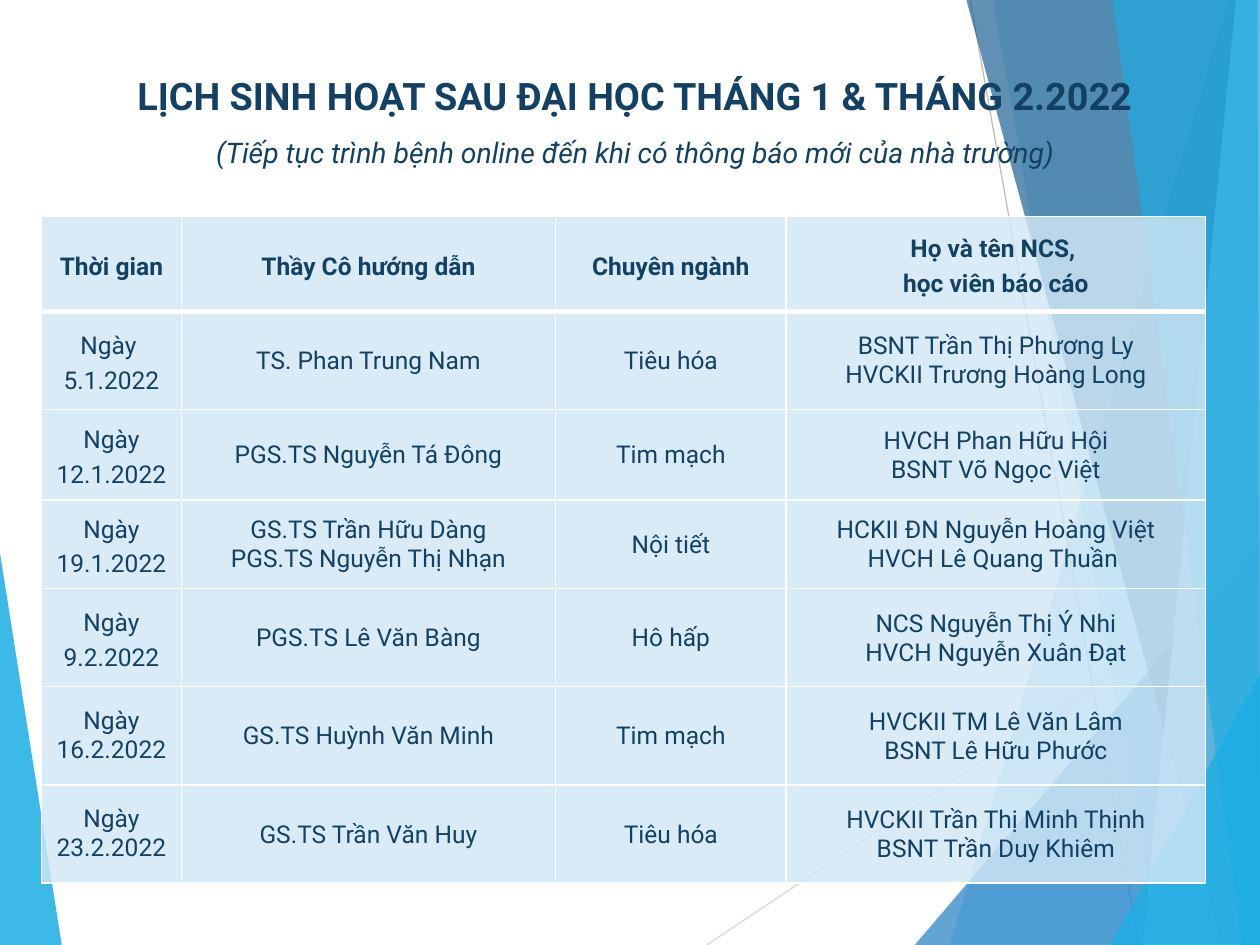
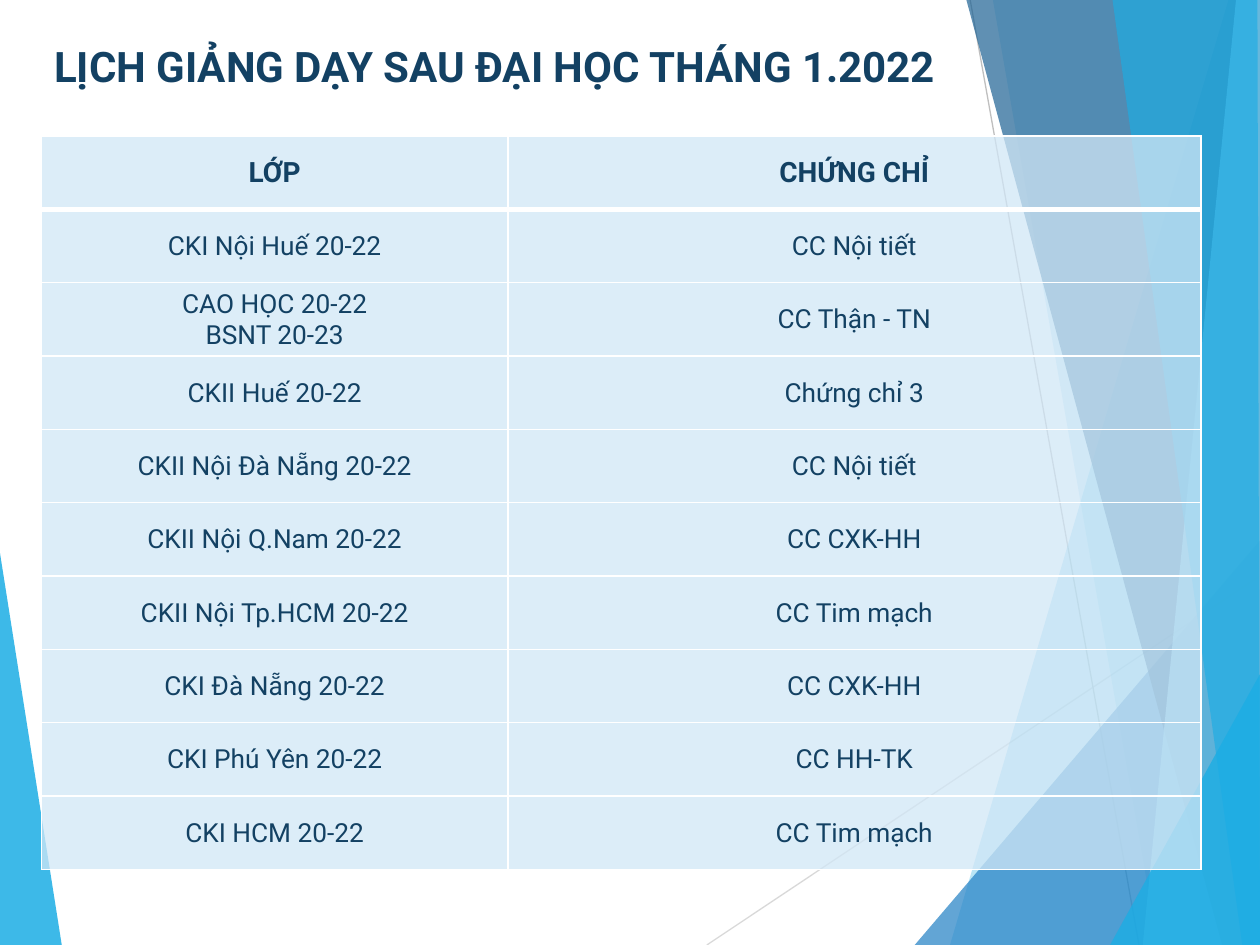
import pptx
import pptx.util
import pptx.dml.color
import pptx.enum.shapes
import pptx.enum.text
import pptx.oxml
import pptx.oxml.ns
from pptx.util import Inches

COLOURS = {
    "text": "134163", "cell": "D1E7F6", "border": "FFFFFF",
    "sky": "1CADE4", "blue": "2683C6", "navy": "1D6294", "pale": "77CEEF",
    "light line": "D9D9D9", "grey line": "BFBFBF",
}
FONT = "Roboto"
CENTER = pptx.enum.text.PP_ALIGN.CENTER
LEFT = pptx.enum.text.PP_ALIGN.LEFT
TIGHT = (0.01, 0.01, 0.01, 0)
DATE_MARGINS = (0.07, 0, 0.07, 0)
HEADER_MARGINS = (0.1, 0.05, 0.1, 0.05)

LEFT_FACET = ("sky", 85, [(0, 4.39), (0.49, 7.5), (0, 7.5)])
RIGHT_FACETS = [
    ("sky", 30, [(9.75, 0), (7.54, 7.5), (10, 7.5), (10, 0)]),
    ("sky", 20, [(7.88, 0), (9.19, 7.5), (10, 7.5), (10, 0)]),
    ("blue", 72, [(7.26, 7.5), (10, 4.29), (10, 7.5)]),
    ("navy", 70, [(7.67, 0), (9.7, 7.5), (10, 7.5), (10, 0)]),
    ("pale", 70, [(9.81, 0), (9.07, 7.5), (10, 7.5), (10, 0)]),
    ("sky", 65, [(8.83, 0), (9.86, 7.5), (10, 7.5), (9.98, 0)]),
    ("sky", 80, [(8.81, 7.5), (10, 5.35), (10, 7.5)]),
]
LINES = [("light line", 5.61, 7.5, 10, 4.57), ("grey line", 7.7, 0, 9.04, 7.5)]

CLINIC_ROWS = [
    ("Thời gian", "Thầy Cô hướng dẫn", "Chuyên ngành", "Họ và tên NCS, \nhọc viên báo cáo"),
    ("Ngày \n5.1.2022", "TS. Phan Trung Nam", "Tiêu hóa",
     "BSNT Trần Thị Phương Ly\nHVCKII Trương Hoàng Long"),
    ("Ngày 12.1.2022", "PGS.TS Nguyễn Tá Đông", "Tim mạch",
     "HVCH Phan Hữu Hội\nBSNT Võ Ngọc Việt"),
    ("Ngày 19.1.2022", "GS.TS Trần Hữu Dàng\nPGS.TS Nguyễn Thị Nhạn", "Nội tiết",
     "HCKII ĐN Nguyễn Hoàng Việt\nHVCH Lê Quang Thuần "),
    ("Ngày 9.2.2022", "PGS.TS Lê Văn Bàng", "Hô hấp",
     "NCS Nguyễn Thị Ý Nhi\nHVCH Nguyễn Xuân Đạt"),
    ("Ngày 16.2.2022", "GS.TS Huỳnh Văn Minh", "Tim mạch",
     "HVCKII TM Lê Văn Lâm\nBSNT Lê Hữu Phước"),
    ("Ngày\n23.2.2022", "GS.TS Trần Văn Huy", "Tiêu hóa",
     "HVCKII Trần Thị Minh Thịnh\nBSNT Trần Duy Khiêm"),
]
CLASS_ROWS = [
    ("LỚP", "CHỨNG CHỈ"),
    ("CKI Nội Huế 20-22", "CC Nội tiết"),
    ("CAO HỌC 20-22\nBSNT 20-23", "CC Thận - TN"),
    ("CKII Huế 20-22", "Chứng chỉ 3"),
    ("CKII Nội Đà Nẵng 20-22", "CC Nội tiết"),
    ("CKII Nội Q.Nam 20-22", "CC CXK-HH"),
    ("CKII Nội Tp.HCM 20-22", "CC Tim mạch"),
    ("CKI Đà Nẵng 20-22", "CC CXK-HH"),
    ("CKI Phú Yên 20-22", "CC HH-TK"),
    ("CKI HCM 20-22", "CC Tim mạch"),
]


def rgb(name):
    return pptx.dml.color.RGBColor.from_string(COLOURS[name])


def fill_translucent(fill, colour, opacity):
    """Fill with a colour at an opacity in percent."""
    fill.solid()
    fill.fore_color.rgb = rgb(colour)
    alpha = pptx.oxml.parse_xml(
        f'<a:alpha {pptx.oxml.ns.nsdecls("a")} val="{opacity * 1000}"/>')
    fill._xPr.find(".//" + pptx.oxml.ns.qn("a:srgbClr")).append(alpha)


def style_paragraph(para, size, bold=False, italic=False, align=CENTER, spacing=1.0):
    para.alignment = align
    para.line_spacing = spacing
    for span in para.runs:
        span.font.name = FONT
        span.font.size = pptx.util.Pt(size)
        span.font.bold = bold
        span.font.italic = italic
        span.font.color.rgb = rgb("text")


def add_facet(page, colour, opacity, points):
    corners = [(Inches(x), Inches(y)) for x, y in points]
    builder = page.shapes.build_freeform(*corners[0])
    builder.add_line_segments(corners[1:], close=True)
    facet = builder.convert_to_shape()
    facet.shadow.inherit = False
    facet.line.fill.background()
    fill_translucent(facet.fill, colour, opacity)
    return facet


def add_line(page, colour, *ends):
    line = page.shapes.add_connector(
        pptx.enum.shapes.MSO_CONNECTOR.STRAIGHT, *map(Inches, ends))
    line.line.color.rgb = rgb(colour)
    line.line.width = pptx.util.Pt(0.75)
    line._element.spPr.append(
        pptx.oxml.parse_xml(f'<a:effectLst {pptx.oxml.ns.nsdecls("a")}/>'))
    return line


def move_backdrop_to_layout(page, layout):
    """Draw the facets on a page, then hand them to the layout all pages share."""
    for holder in list(layout.placeholders)[1:]:
        holder.element.getparent().remove(holder.element)
    backdrop = [add_facet(page, *LEFT_FACET)]
    backdrop += [add_line(page, *line) for line in LINES]
    backdrop += [add_facet(page, *facet) for facet in RIGHT_FACETS]
    for shape in backdrop:
        layout.shapes.element.append(shape._element)


def set_title(page, text, left, top, width, height):
    title = page.shapes.title
    title.left, title.top = Inches(left), Inches(top)
    title.width, title.height = Inches(width), Inches(height)
    frame = title.text_frame
    frame.text = text
    frame.word_wrap = True
    frame.auto_size = pptx.enum.text.MSO_AUTO_SIZE.NONE
    frame.vertical_anchor = pptx.enum.text.MSO_ANCHOR.TOP
    return frame.paragraphs


def set_borders(cell, top, bottom):
    """Draw white borders; the widths above and below are in points."""
    properties = cell._tc.get_or_add_tcPr()
    widths = {"lnL": 1, "lnR": 1, "lnT": top, "lnB": bottom}
    for position, (side, width) in enumerate(widths.items()):
        properties.insert(position, pptx.oxml.parse_xml(
            f'<a:{side} {pptx.oxml.ns.nsdecls("a")} w="{pptx.util.Pt(width)}"><a:solidFill>'
            f'<a:srgbClr val="{COLOURS["border"]}"/></a:solidFill></a:{side}>'))


def fill_cell(cell, text, margins, opacity, row):
    cell.text_frame.text = text
    cell.vertical_anchor = pptx.enum.text.MSO_ANCHOR.MIDDLE
    (cell.margin_left, cell.margin_top,
     cell.margin_right, cell.margin_bottom) = map(Inches, margins)
    fill_translucent(cell.fill, "cell", opacity)
    set_borders(cell, top=3 if row == 1 else 1, bottom=3 if row == 0 else 1)


def add_schedule(page, rows, top, widths, heights, opacity, sizes, margins_at, spacing_at):
    """Add a table; sizes are (header, body), the _at functions take row and column."""
    table = page.shapes.add_table(
        len(rows), len(widths), Inches(0.33), Inches(top),
        Inches(sum(widths)), Inches(sum(heights))).table
    table.horz_banding = False
    for column, width in zip(table.columns, widths):
        column.width = Inches(width)
    for r, (texts, height) in enumerate(zip(rows, heights)):
        table.rows[r].height = Inches(height)
        for c, text in enumerate(texts):
            cell = table.cell(r, c)
            fill_cell(cell, text, margins_at(r, c), opacity, r)
            for para in cell.text_frame.paragraphs:
                style_paragraph(para, sizes[r > 0], bold=r == 0, spacing=spacing_at(r, c))


def clinic_margins(row, column):
    if row == 0:
        return HEADER_MARGINS
    return DATE_MARGINS if column == 0 else TIGHT


def clinic_spacing(row, column):
    return 1.2 if row == 0 or (column == 0 and row < 5) else 1.0


def add_clinic_page(page):
    heading, note = set_title(
        page, "LỊCH SINH HOẠT SAU ĐẠI HỌC THÁNG 1 & THÁNG 2.2022\n"
        "(Tiếp tục trình bệnh online đến khi có thông báo mới của nhà trường)",
        0.33, 0.35, 9.42, 1.25)
    style_paragraph(heading, 21.6, bold=True, spacing=1.5)
    style_paragraph(note, 16.2, italic=True, spacing=1.5)
    add_schedule(page, CLINIC_ROWS, 1.72, [1.11, 2.97, 1.83, 3.33],
                 [0.75, 0.78, 0.72, 0.7, 0.78, 0.78, 0.78], 82, (14, 14),
                 clinic_margins, clinic_spacing)


def add_class_page(page):
    heading, = set_title(page, "LỊCH GIẢNG DẠY SAU ĐẠI HỌC THÁNG 1.2022",
                         0.33, 0.27, 8.62, 0.58)
    style_paragraph(heading, 24, bold=True, align=LEFT)
    add_schedule(page, CLASS_ROWS, 1.08, [3.7, 5.5],
                 [5.82 / len(CLASS_ROWS)] * len(CLASS_ROWS), 75, (16, 15),
                 lambda row, column: TIGHT, lambda row, column: 1.0)


def main():
    deck = pptx.Presentation()
    deck.slide_width, deck.slide_height = Inches(10), Inches(7.5)
    layout = deck.slide_layouts[5]
    clinic_page = deck.slides.add_slide(layout)
    move_backdrop_to_layout(clinic_page, layout)
    add_clinic_page(clinic_page)
    add_class_page(deck.slides.add_slide(layout))
    deck.save("out.pptx")


if __name__ == "__main__":
    main()
